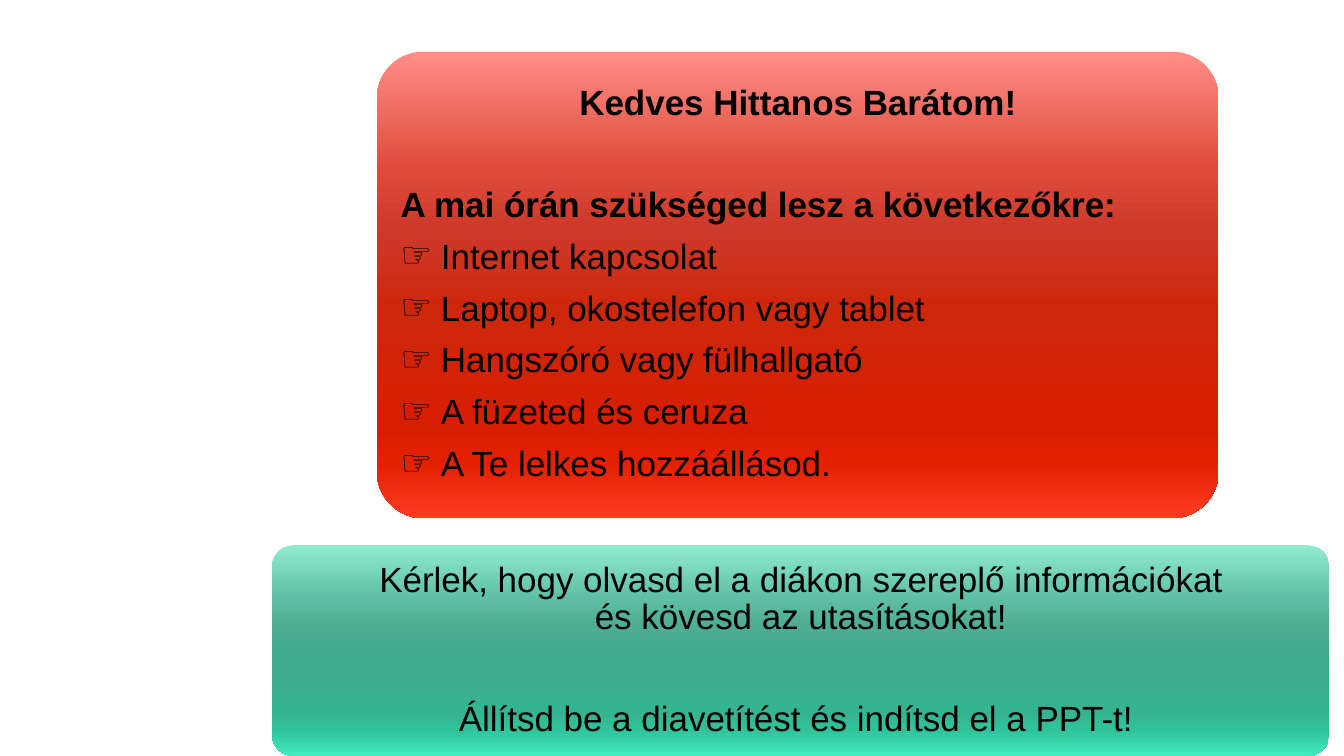
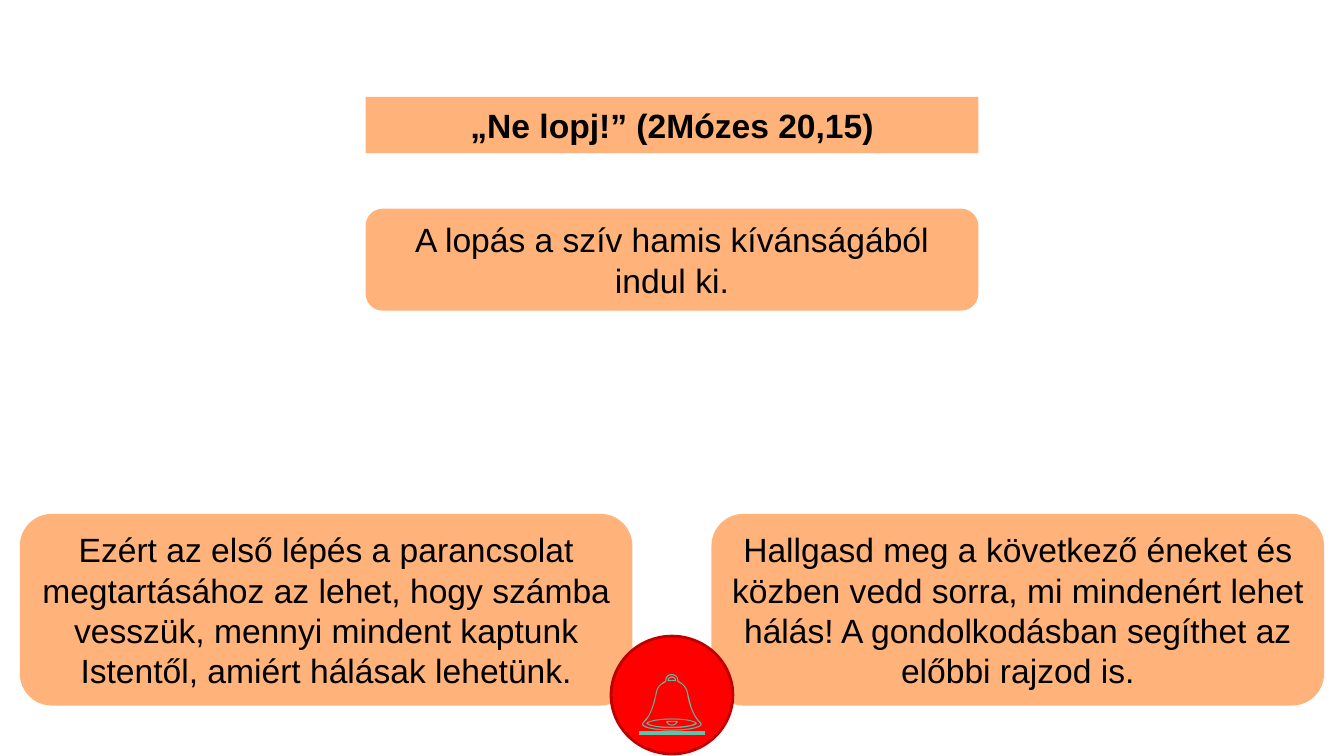
from dataclasses import dataclass
from lxml.etree import SubElement
from pptx import Presentation
from pptx.dml.color import RGBColor
from pptx.enum.shapes import MSO_SHAPE
from pptx.enum.text import MSO_ANCHOR, MSO_AUTO_SIZE, PP_ALIGN
from pptx.oxml.ns import qn
from pptx.util import Cm, Pt


@dataclass(frozen=True)
class Theme:
    font: str = "Arial"
    ink: str = "000000"
    peach: str = "FFB37A"
    red: str = "FF0000"
    rim: str = "C00000"
    mint: str = "56C7AA"
    stops: tuple = (0, 25, 38, 55, 80, 88, 100)
    coral: tuple = ("FF8E88", "DF4B3B", "CE392A", "CD270C",
                    "D71E00", "E32000", "FF3C22")
    teal: tuple = ("91ECCE", "5EBFA4", "4DAE92", "40AA8D",
                   "35B491", "30C49C", "42EDBD")
    intro: int = 25
    body: int = 24
    icon: int = 54
    gap: float = 10
    wide: float = 45.7


theme = Theme()
WIDTH, HEIGHT = 33.87, 19.05


def style(shape, text, size, color=theme.ink, bold=False):
    """Set centred text in a shape without outline or shadow."""
    shape.shadow.inherit = False
    shape.line.fill.background()
    frame = shape.text_frame
    frame.text = text
    frame.word_wrap = True
    frame.auto_size = MSO_AUTO_SIZE.NONE
    frame.vertical_anchor = MSO_ANCHOR.MIDDLE
    for para in frame.paragraphs:
        para.alignment = PP_ALIGN.CENTER
        for run in para.runs:
            run.font.name = theme.font
            run.font.size = Pt(size)
            run.font.bold = bold
            run.font.color.rgb = RGBColor.from_string(color)


def shade(shape, colors):
    """Fill a shape from top to bottom with the theme's gradient stops."""
    shape.fill.gradient()
    shape.fill.gradient_angle = 270
    stops = shape.element.spPr.find(qn("a:gradFill")).find(qn("a:gsLst"))
    for old in list(stops):
        stops.remove(old)
    for place, color in zip(theme.stops, colors):
        stop = SubElement(stops, qn("a:gs"), pos=str(place * 1000))
        SubElement(stop, qn("a:srgbClr"), val=color)


deck = Presentation()
deck.slide_width, deck.slide_height = Cm(WIDTH), Cm(HEIGHT)

# Slide 1: what to bring and how to start
slide = deck.slides.add_slide(deck.slide_layouts[6])
request = ("Kérlek, hogy olvasd el a diákon szereplő információkat\v"
           "és kövesd az utasításokat!\n"
           "Állítsd be a diavetítést és indítsd el a PPT-t! ")
needs = ("Kedves Hittanos Barátom!\n"
         "A mai órán szükséged lesz a következőkre:\n"
         "Internet kapcsolat\n"
         "Laptop, okostelefon vagy tablet\n"
         "Hangszóró vagy fülhallgató\n"
         "A füzeted és ceruza\n"
         "A Te lelkes hozzáállásod.")
panels = []
for text, colors, area in (
    (request, theme.teal, (6.86, 13.74, 26.64, 5.31)),
    (needs, theme.coral, (9.5, 1.3, 21.21, 11.76)),
):
    panel = slide.shapes.add_shape(MSO_SHAPE.ROUNDED_RECTANGLE, *map(Cm, area))
    panel.adjustments[0] = 0.1
    shade(panel, colors)
    style(panel, text, theme.intro)
    frame = panel.text_frame
    frame.margin_left = frame.margin_right = Cm(0.25)
    frame.margin_top = frame.margin_bottom = Cm(0.25)
    for para in frame.paragraphs:
        para.line_spacing = 0.9
        para.space_after = Pt(theme.gap)
    frame.paragraphs[0].space_after = Pt(theme.wide)
    panels.append(panel)

greet, lead, *items = panels[1].text_frame.paragraphs
for para in (greet, lead):
    para.runs[0].font.bold = True
for para in (lead, *items):
    para.alignment = PP_ALIGN.LEFT
for item in items:
    props = item._p.get_or_add_pPr()
    props.set("marL", str(Cm(1.02)))
    props.set("indent", str(-Cm(1.02)))
    SubElement(props, qn("a:buFont"), typeface=theme.font)
    SubElement(props, qn("a:buChar"), char="☞")

# Slide 2: the commandment
slide = deck.slides.add_slide(deck.slide_layouts[5])
wide, edge = 15.44, 0.5
mid = (WIDTH - wide) / 2
right = WIDTH - wide - edge

title = slide.shapes.title
title.left, title.top, title.width, title.height = map(
    Cm, (mid, 2.44, wide, 1.42))
shape = SubElement(title.element.spPr, qn("a:prstGeom"), prst="roundRect")
SubElement(shape, qn("a:avLst"))
title.fill.solid()
title.fill.fore_color.rgb = RGBColor.from_string(theme.peach)
style(title, "„Ne lopj!” (2Mózes 20,15)", theme.body, bold=True)

for text, left, top, tall in (
    ("Ezért az első lépés a parancsolat megtartásához az lehet, hogy számba "
     "vesszük, mennyi mindent kaptunk Istentől, amiért hálásak lehetünk.",
     edge, 12.95, 4.83),
    ("A lopás a szív hamis kívánságából indul ki.", mid, 5.26, 2.57),
    ("Hallgasd meg a következő éneket és közben vedd sorra, mi mindenért "
     "lehet hálás! A gondolkodásban segíthet az előbbi rajzod is.",
     right, 12.95, 4.83),
):
    card = slide.shapes.add_shape(
        MSO_SHAPE.ROUNDED_RECTANGLE, *map(Cm, (left, top, wide, tall)))
    card.fill.solid()
    card.fill.fore_color.rgb = RGBColor.from_string(theme.peach)
    style(card, text, theme.body)

size = 3.07
bell = slide.shapes.add_shape(
    MSO_SHAPE.FLOWCHART_CONNECTOR,
    *map(Cm, ((WIDTH - size) / 2, 16.03, size, 2.97)))
bell.fill.solid()
bell.fill.fore_color.rgb = RGBColor.from_string(theme.red)
style(bell, "🔔", theme.icon, theme.mint, bold=True)
bell.text_frame.paragraphs[0].runs[0].font.underline = True
bell.line.color.rgb = RGBColor.from_string(theme.rim)
bell.line.width = Pt(2)

deck.save("out.pptx")
